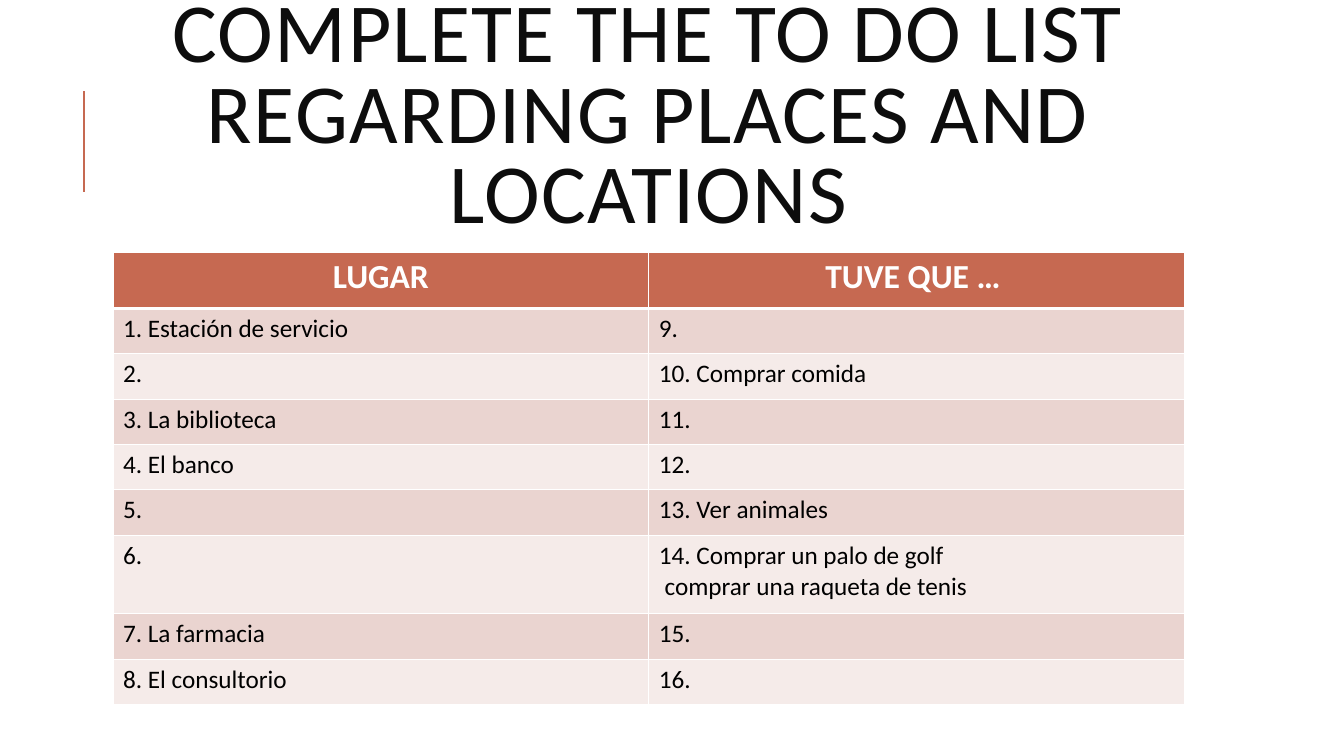
from lxml import etree
from pptx import Presentation
from pptx import util as u
from pptx.dml.color import RGBColor
from pptx.enum import shapes, text
from pptx.oxml.ns import qn

ACCENT = RGBColor(0xC6, 0x69, 0x51)
BAND_DARK = RGBColor(0xEA, 0xD4, 0xD0)
BAND_LIGHT = RGBColor(0xF5, 0xEB, 0xE9)
WHITE = RGBColor(0xFF, 0xFF, 0xFF)
BLACK = RGBColor(0x00, 0x00, 0x00)
INK = RGBColor(0x0D, 0x0D, 0x0D)

ROWS = [
    ("LUGAR", "TUVE QUE … "),
    ("1. Estación de servicio", "9."),
    ("2.", "10. Comprar comida"),
    ("3. La biblioteca", "11."),
    ("4. El banco", "12."),
    ("5.", "13. Ver animales"),
    ("6.", "14. Comprar un palo de golf\n comprar una raqueta de tenis"),
    ("7. La farmacia", "15."),
    ("8. El consultorio", "16."),
]
HEADER_FONT = {"name": "Calibri", "size": u.Pt(24), "bold": True}
BODY_FONT = {"name": "Calibri", "size": u.Pt(18), "bold": False}
TITLE_FONT = {"name": "Calibri", "size": u.Pt(60), "bold": False}


def style(p, font, color, align):
    p.alignment = align
    for r in p.runs:
        for key, value in font.items():
            setattr(r.font, key, value)
        r.font.color.rgb = color


def border(cell, side, width):
    ln = etree.SubElement(cell._tc.get_or_add_tcPr(), qn(f"a:ln{side}"), w=str(u.Pt(width)))
    fill = etree.SubElement(ln, qn("a:solidFill"))
    etree.SubElement(fill, qn("a:srgbClr"), val=str(WHITE))


prs = Presentation()
prs.slide_width, prs.slide_height = u.Inches(13.33), u.Inches(7.5)
s = prs.slides.add_slide(prs.slide_layouts[6])
left, width = u.Inches(1.12), u.Inches(10.63)

# Accent line beside the title
x = prs.slide_width // 16
line = s.shapes.add_connector(shapes.MSO_CONNECTOR.STRAIGHT, x, u.Inches(1.9), x, u.Inches(0.9))
line.line.color.rgb = ACCENT
line.line.width = u.Pt(1.5)
etree.SubElement(line._element.spPr, qn("a:effectLst"))

# Title
sp = s.shapes.add_textbox(left, u.Inches(0.36), width, u.Inches(1.64))
tf = sp.text_frame
tf.word_wrap = True
tf.vertical_anchor = text.MSO_ANCHOR.MIDDLE
p = tf.paragraphs[0]
p.text = "COMPLETE THE TO DO LIST REGARDING PLACES AND LOCATIONS"
p.line_spacing = 0.8
style(p, TITLE_FONT, INK, text.PP_ALIGN.CENTER)
p.runs[0].font._element.set("spc", "100")

# To-do table
table = s.shapes.add_table(len(ROWS), 2, left, u.Inches(2.5), width, u.Inches(4.53)).table
for i, row in enumerate(ROWS):
    header = i == 0
    two_lines = any("\n" in words for words in row)
    table.rows[i].height = u.Inches(0.56 if header else 0.78 if two_lines else 0.45)
    for j, words in enumerate(row):
        cell = table.cell(i, j)
        cell.text = words
        for side in "LRTB":
            thick = (header and side == "B") or (i == 1 and side == "T")
            border(cell, side, 3 if thick else 1)
        cell.fill.solid()
        cell.fill.fore_color.rgb = ACCENT if header else BAND_DARK if i % 2 else BAND_LIGHT
        for p in cell.text_frame.paragraphs:
            if header:
                style(p, HEADER_FONT, WHITE, text.PP_ALIGN.CENTER)
            else:
                style(p, BODY_FONT, BLACK, text.PP_ALIGN.LEFT)

prs.save("out.pptx")
